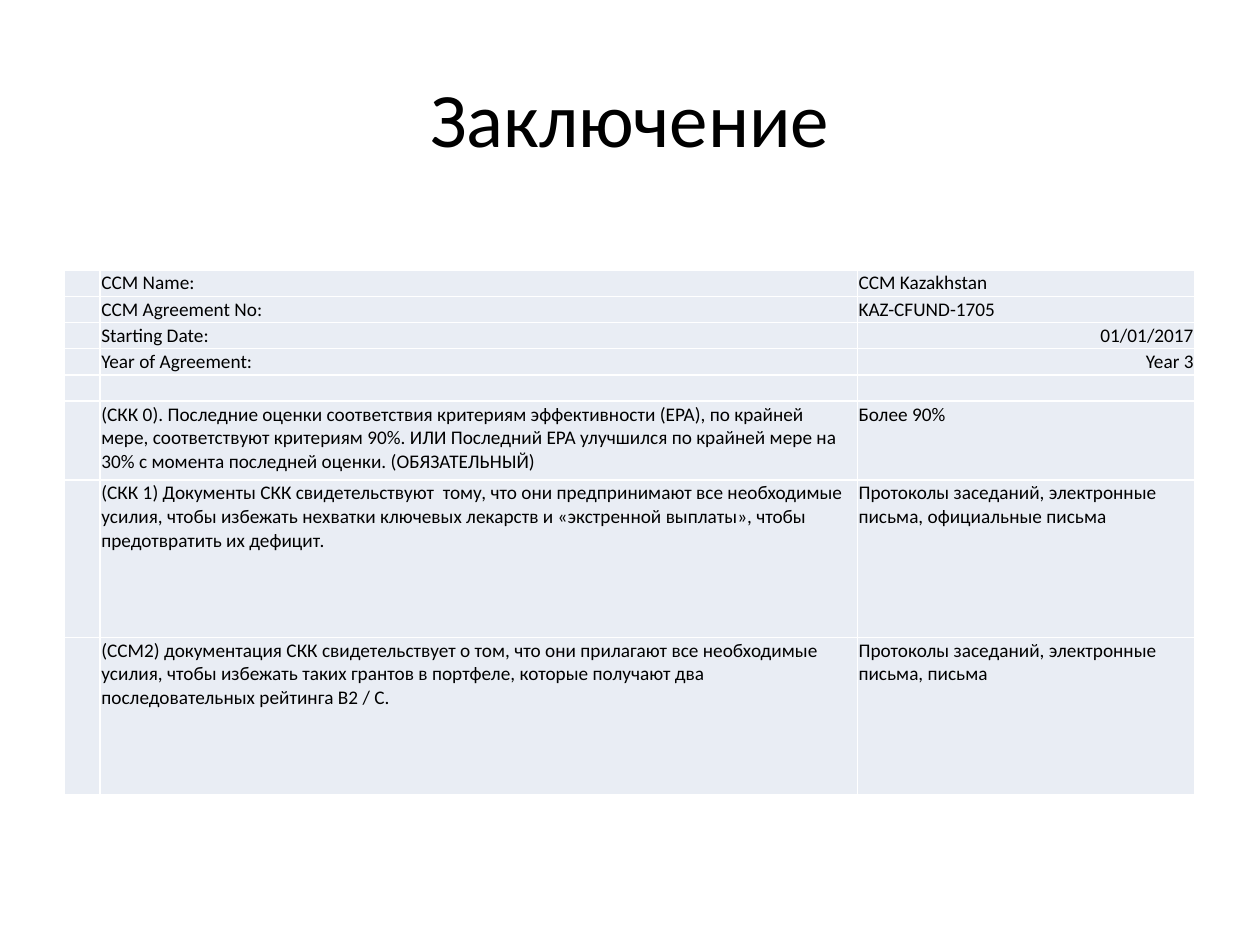
from lxml.etree import SubElement
from pptx import Presentation
from pptx.dml.color import RGBColor
from pptx.enum.text import MSO_ANCHOR as Anchor, PP_ALIGN as Align
from pptx.oxml.ns import qn
from pptx.util import Pt

FONT = "Calibri"
BLACK, WHITE, CELL_FILL = "000000", "FFFFFF", "E9EDF4"
TEXT_SIZE = 11
COL_WIDTHS = [20.2, 432.7, 193]
ROW_HEIGHTS = [15] * 5 + [45, 90, 90]
CELL_MARGINS = {"margin_left": 0.75, "margin_top": 0.75,
                "margin_right": 0.75, "margin_bottom": 0}

# Criterion, answer, alignment of the answer
ROWS = [
    ("CCM Name:", "CCM Kazakhstan", Align.LEFT),
    ("CCM Agreement No:", "KAZ-CFUND-1705", Align.LEFT),
    ("Starting Date:", "01/01/2017", Align.RIGHT),
    ("Year of Agreement:", "Year 3", Align.RIGHT),
    ("", "", Align.LEFT),
    ("(CКК 0). Последние оценки соответствия критериям эффективности (EPA), "
     "по крайней мере, соответствуют критериям 90%. ИЛИ Последний EPA улучшился "
     "по крайней мере на 30% с момента последней оценки. (ОБЯЗАТЕЛЬНЫЙ)",
     "Более 90%", Align.LEFT),
    ("(СКК 1) Документы СКК свидетельствуют  тому, что они предпринимают все "
     "необходимые усилия, чтобы избежать нехватки ключевых лекарств и "
     "«экстренной выплаты», чтобы предотвратить их дефицит.",
     "Протоколы заседаний, электронные письма, официальные письма", Align.LEFT),
    ("(CCM2) документация СКК свидетельствует о том, что они прилагают все "
     "необходимые усилия, чтобы избежать таких грантов в портфеле, которые "
     "получают два последовательных рейтинга B2 / C.",
     "Протоколы заседаний, электронные письма, письма", Align.LEFT),
]


def color(hex_value):
    return RGBColor.from_string(hex_value)


def write(p, text, size, align):
    """Put one formatted run into a paragraph, or size the paragraph if empty."""
    p.alignment = align
    if not text:
        SubElement(p._p, qn("a:endParaRPr"), sz=str(size * 100))
        return
    r = p.add_run()
    r.text = text
    for name, value in {"name": FONT, "size": Pt(size)}.items():
        setattr(r.font, name, value)
    r.font.color.rgb = color(BLACK)


def set_borders(cell, hex_value, width):
    tc_pr = cell._tc.get_or_add_tcPr()
    for i, side in enumerate(("lnL", "lnR", "lnT", "lnB")):
        ln = tc_pr.makeelement(qn(f"a:{side}"), {"w": str(Pt(width))})
        SubElement(SubElement(ln, qn("a:solidFill")), qn("a:srgbClr"), val=hex_value)
        tc_pr.insert(i, ln)


def fill_cell(cell, text, align):
    for name, value in CELL_MARGINS.items():
        setattr(cell, name, Pt(value))
    cell.vertical_anchor = Anchor.TOP
    cell.fill.solid()
    cell.fill.fore_color.rgb = color(CELL_FILL)
    set_borders(cell, WHITE, 1)
    write(cell.text_frame.paragraphs[0], text, TEXT_SIZE, align)


def place_title(slide, left, top, width, height):
    title = slide.shapes.title
    box = {"left": left, "top": top, "width": width, "height": height}
    for name, value in box.items():
        setattr(title, name, Pt(value))
    title.text_frame.vertical_anchor = Anchor.MIDDLE
    write(title.text_frame.paragraphs[0], "Заключение", 44, Align.CENTER)


def add_criteria_table(slide, left, top):
    table = slide.shapes.add_table(
        len(ROWS), len(COL_WIDTHS), Pt(left), Pt(top),
        Pt(sum(COL_WIDTHS)), Pt(sum(ROW_HEIGHTS))).table
    table.first_row = table.horz_banding = False
    for col, width in zip(table.columns, COL_WIDTHS):
        col.width = Pt(width)
    for row, height, (criterion, answer, align) in zip(table.rows, ROW_HEIGHTS, ROWS):
        row.height = Pt(height)
        parts = [("", Align.LEFT), (criterion, Align.LEFT), (answer, align)]
        for cell, (text, cell_align) in zip(row.cells, parts):
            fill_cell(cell, text, cell_align)


def main():
    prs = Presentation()
    prs.slide_width, prs.slide_height = Pt(720), Pt(540)
    slide = prs.slides.add_slide(prs.slide_layouts[5])
    place_title(slide, 36, 21.6, 648, 90)
    add_criteria_table(slide, 37, 154.3)
    prs.save("out.pptx")


if __name__ == "__main__":
    main()
